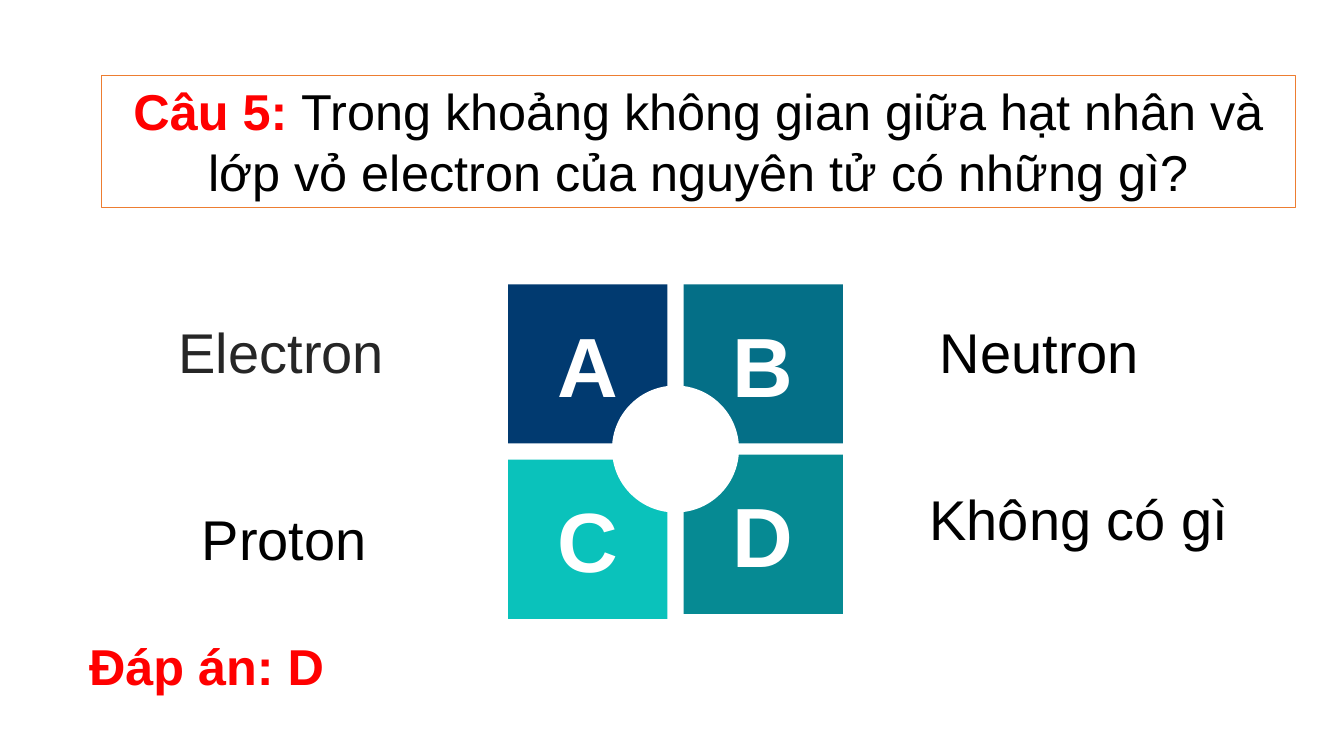
from dataclasses import dataclass

from pptx import Presentation
from pptx.dml.color import RGBColor
from pptx.enum.shapes import MSO_SHAPE
from pptx.enum.text import MSO_ANCHOR, MSO_AUTO_SIZE, PP_ALIGN
from pptx.util import Inches, Pt


@dataclass(frozen=True)
class Theme:
    """Colours, font and type sizes of the quiz slide."""
    font: str = "Arial"
    white: str = "FFFFFF"
    ink: str = "000000"
    soft_ink: str = "262626"
    accent: str = "FF0000"
    border: str = "ED7D31"
    tiles: tuple = ("013A70", "046F87", "0AC2BB", "068A93")
    letter: int = 60
    option: int = 40
    question: int = 36


T = Theme()
COLS, ROWS = 13.33, 7.5
CELL = Inches(1)
TILE, PITCH = 1.58, 1.74
TILES_LEFT, TILES_TOP = 5.04, 2.82
D_LIFT = 0.05
HUB = 1.26
OPTION_H = 0.77


def grid(*cells):
    """Turn columns and rows of the slide grid into lengths."""
    return [round(n * CELL) for n in cells]


def write(sp, runs, size, anchor=MSO_ANCHOR.TOP, grow=True, inset=None):
    """Put one centred paragraph of (text, colour, bold) runs into a shape."""
    tf = sp.text_frame
    frame = {"word_wrap": True, "vertical_anchor": anchor}
    if grow:
        frame["auto_size"] = MSO_AUTO_SIZE.SHAPE_TO_FIT_TEXT
    if inset is not None:
        frame.update({f"margin_{side}": inset for side in ("left", "top", "right", "bottom")})
    for name, value in frame.items():
        setattr(tf, name, value)
    p = tf.paragraphs[0]
    p.alignment = PP_ALIGN.CENTER
    for text, color, bold in runs:
        r = p.add_run()
        r.text = text
        for name, value in {"name": T.font, "size": Pt(size), "bold": bold}.items():
            setattr(r.font, name, value)
        r.font.color.rgb = RGBColor.from_string(color)


def add_block(s, kind, box, fill, line=None):
    """Add a flat preset shape with an optional outline."""
    sp = s.shapes.add_shape(kind, *grid(*box))
    sp.shadow.inherit = False
    sp.fill.solid()
    sp.fill.fore_color.rgb = RGBColor.from_string(fill)
    if line:
        sp.line.color.rgb = RGBColor.from_string(line)
        sp.line.width = Pt(1)
    else:
        sp.line.fill.background()
    return sp


def add_label(s, box, text, size, color=T.ink, bold=False, inset=None):
    """Add a centred text box."""
    write(s.shapes.add_textbox(*grid(*box)), [(text, color, bold)], size, inset=inset)


def add_tiles(s):
    """Add the two-by-two letter tiles and the round hub over their corners."""
    for i, (letter, fill) in enumerate(zip("ABCD", T.tiles)):
        row, col = divmod(i, 2)
        top = TILES_TOP + row * PITCH - (D_LIFT if letter == "D" else 0)
        sp = add_block(s, MSO_SHAPE.RECTANGLE, (TILES_LEFT + col * PITCH, top, TILE, TILE), fill)
        write(sp, [(letter, T.white, True)], T.letter, MSO_ANCHOR.MIDDLE, grow=False)
    offset = (PITCH + TILE - HUB) / 2
    hub_top = TILES_TOP + offset - D_LIFT / 2
    add_block(s, MSO_SHAPE.OVAL, (TILES_LEFT + offset, hub_top, HUB, HUB), T.white)


def add_question(s):
    """Add the framed question."""
    sp = add_block(s, MSO_SHAPE.RECTANGLE, (1.01, 0.75, 11.84, 1.31), T.white, T.border)
    write(sp, [
        ("Câu 5: ", T.accent, True),
        ("Trong khoảng không gian giữa hạt nhân và lớp vỏ electron "
         "của nguyên tử có những gì?", T.ink, False),
    ], T.question)


def main():
    """Build and save the quiz slide."""
    prs = Presentation()
    prs.slide_width, prs.slide_height = grid(COLS, ROWS)
    s = prs.slides.add_slide(prs.slide_layouts[6])
    add_tiles(s)
    add_question(s)
    for text, left, top, width, color in (
        ("Electron", 1.41, 3.1, 2.76, T.soft_ink),
        ("Neutron", 9.15, 3.1, 2.32, T.ink),
        ("Proton", 1.86, 4.96, 1.92, T.ink),
        ("Không có gì", 9, 4.76, 3.4, T.ink),
    ):
        add_label(s, (left, top, width, OPTION_H), text, T.option, color)
    add_label(s, (0.68, 6.3, 2.74, 0.61), "Đáp án: D", T.question, T.accent, True, inset=0)
    prs.save("out.pptx")


if __name__ == "__main__":
    main()
